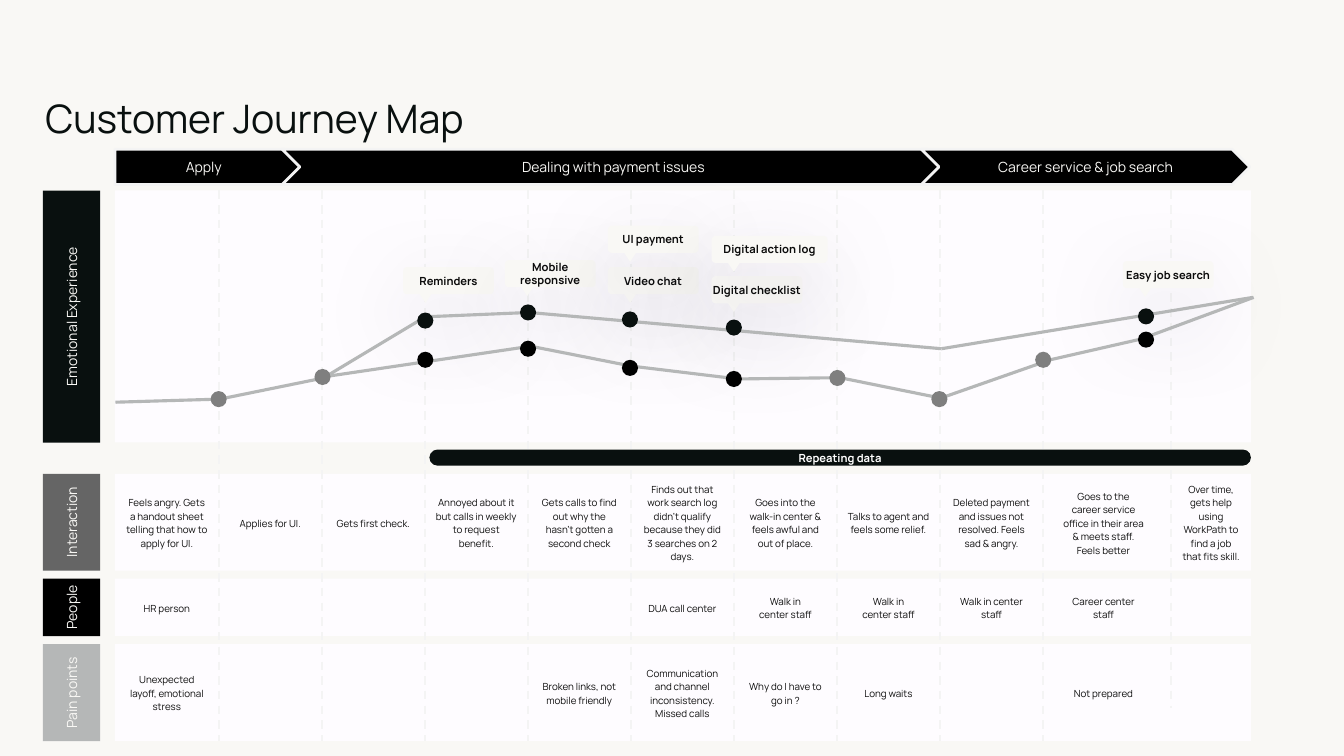
import itertools

import lxml.etree
import pptx
import pptx.dml.color
import pptx.enum.dml
import pptx.enum.shapes
import pptx.enum.text
import pptx.oxml
import pptx.oxml.ns
import pptx.util

Pt = pptx.util.Pt
RGBColor = pptx.dml.color.RGBColor
SHAPE = pptx.enum.shapes.MSO_SHAPE
DASH = pptx.enum.dml.MSO_LINE.DASH
qn = pptx.oxml.ns.qn

CREAM = RGBColor(0xF9, 0xF8, 0xF5)
PANEL = RGBColor(0xFE, 0xFC, 0xFF)
INK = RGBColor(0x09, 0x10, 0x0F)
TEXT = RGBColor(0x0C, 0x0C, 0x0C)
BLACK = RGBColor(0, 0, 0)
WHITE = RGBColor(0xFF, 0xFF, 0xFF)
DARK_GREY = RGBColor(0x65, 0x65, 0x65)
MID_GREY = RGBColor(0x7F, 0x7F, 0x7F)
SILVER = RGBColor(0xB5, 0xB7, 0xB7)
PALE = RGBColor(0xF4, 0xF4, 0xF4)

LEFT, RIGHT = 82.1, 893.5
DIVIDERS = [156.2 + 73.6 * index for index in range(9)] + [836.6]
EDGES = [LEFT, *DIVIDERS, RIGHT]
CENTERS = [(start + end) / 2 for start, end in itertools.pairwise(EDGES)]
CENTERS[9] = 788.2

STAGES = [
    ("Apply", SHAPE.PENTAGON, 82.1, 133.2),
    ("Dealing with payment issues", SHAPE.CHEVRON, 201.6, 473),
    ("Career service & job search", SHAPE.CHEVRON, 658.1, 234.7),
]
ROWS = [
    ("Emotional Experience", INK, 136.1, 180, 0, {}),
    ("Interaction", DARK_GREY, 338.4, 69.2, 39.6, {
        0: "Feels angry. Gets a handout sheet telling that how to apply for UI.",
        1: "Applies for UI.",
        2: "Gets first check.",
        3: "Annoyed about it but calls in weekly to request benefit.",
        4: "Gets calls to find out why the hasn’t gotten a second check",
        5: "Finds out that work search log didn’t qualify because they did 3 searches on 2 days.",
        6: "Goes into the walk-in center & feels awful and out of place.",
        7: "Talks to agent and feels some relief.",
        8: "Deleted payment and issues not resolved. Feels sad & angry.",
        9: "Goes to the career service office in their area & meets staff. Feels better",
        10: "Over time,\ngets help using WorkPath to\nfind a job that fits skill.",
    }),
    ("People", BLACK, 413.3, 41, 9.6, {
        0: "HR person",
        5: "DUA call center",
        6: "Walk in\ncenter staff",
        7: "Walk in\ncenter staff",
        8: "Walk in center staff",
        9: "Career center staff",
    }),
    ("Pain points", SILVER, 460.1, 69.2, 19.4, {
        0: "Unexpected layoff, emotional stress",
        4: "Broken links, not mobile friendly",
        5: "Communication and channel inconsistency. Missed calls",
        6: "Why do I have to go in ?",
        7: "Long waits",
        9: "Not prepared",
    }),
]
CALLOUTS = [
    ("Reminders", 288, 190.8, 64.8),
    ("Mobile responsive", 360.7, 185.8, 64.8),
    ("Video chat", 434.2, 190.8, 64.8),
    ("UI payment", 434.2, 161.3, 64.8),
    ("Digital checklist", 508.3, 197.3, 64.8),
    ("Digital action log", 508.3, 168.5, 82.8),
    ("Easy job search", 802.1, 186.5, 64.8),
]
UPPER_CURVE = [(82.5, 287.3), (157, 285.1), (231, 270), (303.8, 226.3),
               (378, 223.2), (672.5, 249.1), (895, 212.4)]
LOWER_CURVE = [(230.4, 269.3), (379, 247.3), (451, 261.5), (527, 270.7), (600, 269.8),
               (672, 284.4), (750.2, 257), (815, 242.2), (895.5, 212.4)]
DOTS = [
    (INK, [(303.8, 229), (377.2, 223.2), (450, 228.2), (524.2, 234), (818.6, 226)]),
    (BLACK, [(303.8, 257), (377.2, 249.1), (450, 262.8), (524.2, 270.7), (818.6, 242.6)]),
    (MID_GREY, [(156.2, 285.1), (230.4, 269.3), (598.2, 270), (671, 285.1), (745.2, 257)]),
]


def write(shape, text, size, color, bold=False, margin=0, spacing=None,
          alignment=pptx.enum.text.PP_ALIGN.CENTER):
    frame = shape.text_frame
    frame.word_wrap = True
    frame.vertical_anchor = pptx.enum.text.MSO_ANCHOR.MIDDLE
    frame.margin_left = frame.margin_right = Pt(margin)
    frame.margin_top = frame.margin_bottom = Pt(margin)
    paragraph = frame.paragraphs[0]
    paragraph.text = text
    paragraph.alignment = alignment
    paragraph.line_spacing = spacing
    paragraph.font.name = "Manrope"
    paragraph.font.size = Pt(size)
    paragraph.font.bold = bold
    paragraph.font.color.rgb = color


def add_box(shapes, kind, left, top, width, height, fill, adjustment=None):
    shape = shapes.add_shape(kind, Pt(left), Pt(top), Pt(width), Pt(height))
    shape.shadow.inherit = False
    shape.fill.solid()
    shape.fill.fore_color.rgb = fill
    shape.line.fill.background()
    if adjustment is not None:
        shape.adjustments[0] = adjustment
    return shape


def add_text(shapes, text, left, top, width, height, size, color, **options):
    box = shapes.add_textbox(Pt(left), Pt(top), Pt(width), Pt(height))
    write(box, text, size, color, **options)


def add_line(shapes, start, end, color, width, dash=None):
    line = shapes.add_connector(pptx.enum.shapes.MSO_CONNECTOR.STRAIGHT,
                                *[Pt(value) for value in (*start, *end)])
    line.line.color.rgb = color
    line.line.width = Pt(width)
    if dash is not None:
        line.line.dash_style = dash
    lxml.etree.SubElement(line._element.spPr, qn("a:effectLst"))


def add_curve(shapes, points):
    for start, end in itertools.pairwise(points):
        add_line(shapes, start, end, SILVER, 2.25)


def add_soft_shadow(shape):
    effects = shape._element.spPr.find(qn("a:effectLst"))
    shadow = lxml.etree.SubElement(effects, qn("a:outerShdw"), blurRad=str(Pt(69)),
                                   dist=str(Pt(22)), dir="5400000", algn="t", rotWithShape="0")
    color = lxml.etree.SubElement(shadow, qn("a:srgbClr"), val="221B43")
    lxml.etree.SubElement(color, qn("a:alpha"), val="15000")


def add_stage(shapes, text, kind, left, width):
    stage = add_box(shapes, kind, left, 106.6, width, 25.2, BLACK, 0.5)
    stage.line.color.rgb = PALE
    stage.line.width = Pt(2)
    write(stage, text, 10, CREAM, margin=3.6)


def add_row(shapes, title, color, top, height):
    add_box(shapes, SHAPE.ROUNDED_RECTANGLE, LEFT, top, RIGHT - LEFT, height, PANEL, 0)
    header = add_box(shapes, SHAPE.ROUNDED_RECTANGLE, 51.1 - height / 2,
                     top + height / 2 - 20.5, height, 41, color, 0)
    header.rotation = 270
    write(header, title, 10, CREAM)


def add_callout(shapes, text, left, top, width):
    group = shapes.add_group_shape()
    bubble = add_box(group.shapes, SHAPE.ROUNDED_RECTANGLE, left, top, width, 19.4, CREAM, 0.15)
    add_soft_shadow(bubble)
    write(bubble, text, 8, TEXT, bold=True)
    tail = add_box(group.shapes, SHAPE.ISOSCELES_TRIANGLE, left + 11.6, top + 19.1, 8.6, 6.5, CREAM)
    tail.rotation = 180


def main():
    presentation = pptx.Presentation()
    presentation.slide_width, presentation.slide_height = Pt(960), Pt(540)
    slide = presentation.slides.add_slide(presentation.slide_layouts[6])
    slide.background.fill.solid()
    slide.background.fill.fore_color.rgb = CREAM
    shapes = slide.shapes

    add_text(shapes, "Customer Journey Map", 32.4, 65.5, 664.6, 36.7, 28, INK,
             alignment=pptx.enum.text.PP_ALIGN.LEFT)
    for stage in STAGES:
        add_stage(shapes, *stage)
    for title, color, top, height, _, _ in ROWS:
        add_row(shapes, title, color, top, height)
    for x in DIVIDERS:
        bottom = 505.4 if x == DIVIDERS[-1] else 529.5
        add_line(shapes, (x, 136), (x, bottom), PALE, 1.5, DASH)
    repeating = add_box(shapes, SHAPE.ROUNDED_RECTANGLE, 306.7, 321.1, 586.8, 11.5, INK, 0.5)
    write(repeating, "Repeating data", 8, WHITE, bold=True, margin=2)
    for _, _, top, height, text_height, notes in ROWS:
        for column, note in notes.items():
            width = 43.2 if column == 10 else 58.3
            add_text(shapes, note, CENTERS[column] - width / 2, top + (height - text_height) / 2,
                     width, text_height, 7, TEXT, spacing=1.15)
    for callout in CALLOUTS:
        add_callout(shapes, *callout)
    add_curve(shapes, UPPER_CURVE)
    add_curve(shapes, LOWER_CURVE)
    for color, centers in DOTS:
        for x, y in centers:
            add_box(shapes, SHAPE.OVAL, x - 5.75, y - 5.75, 11.5, 11.5, color)
    presentation.save("out.pptx")


if __name__ == "__main__":
    main()
